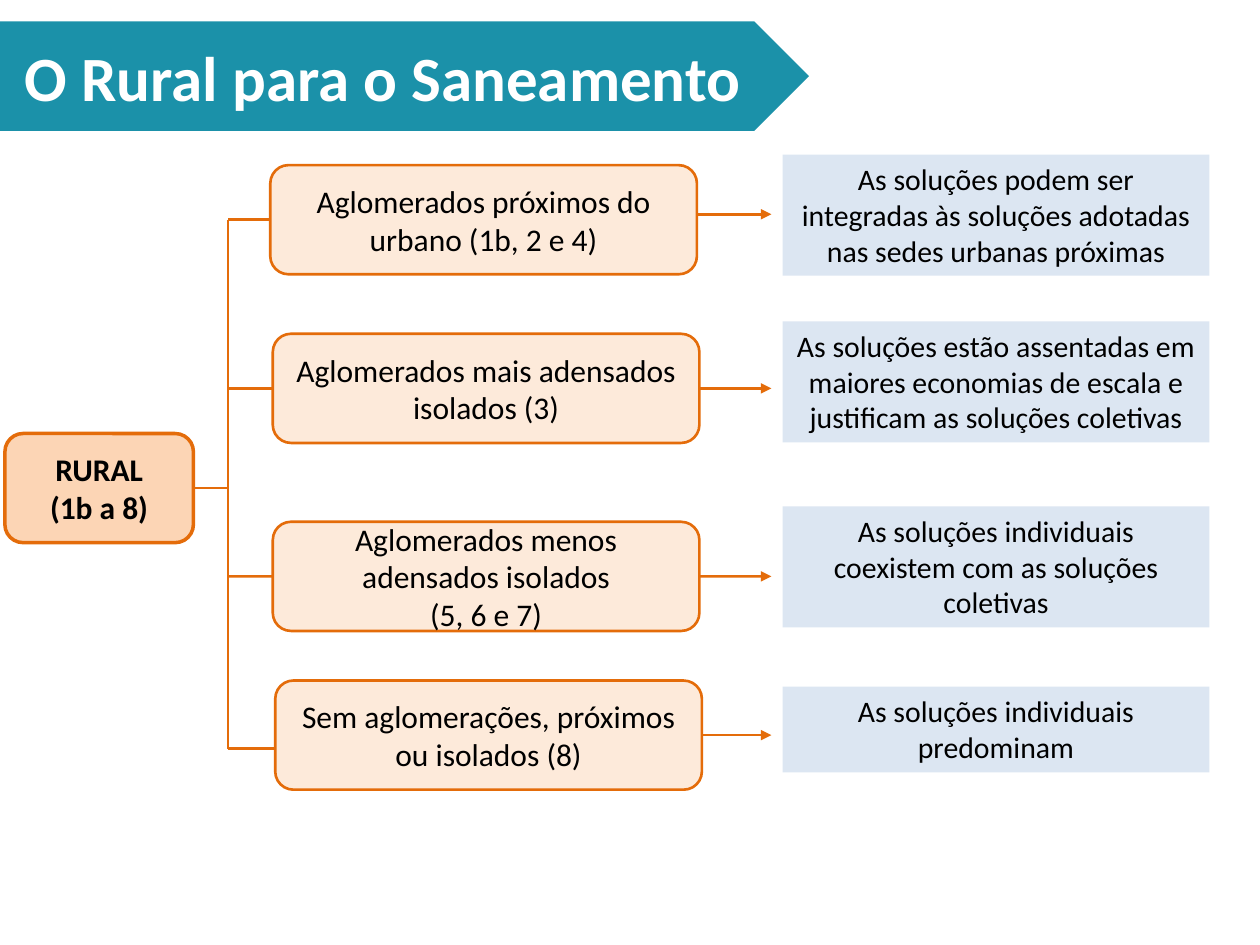
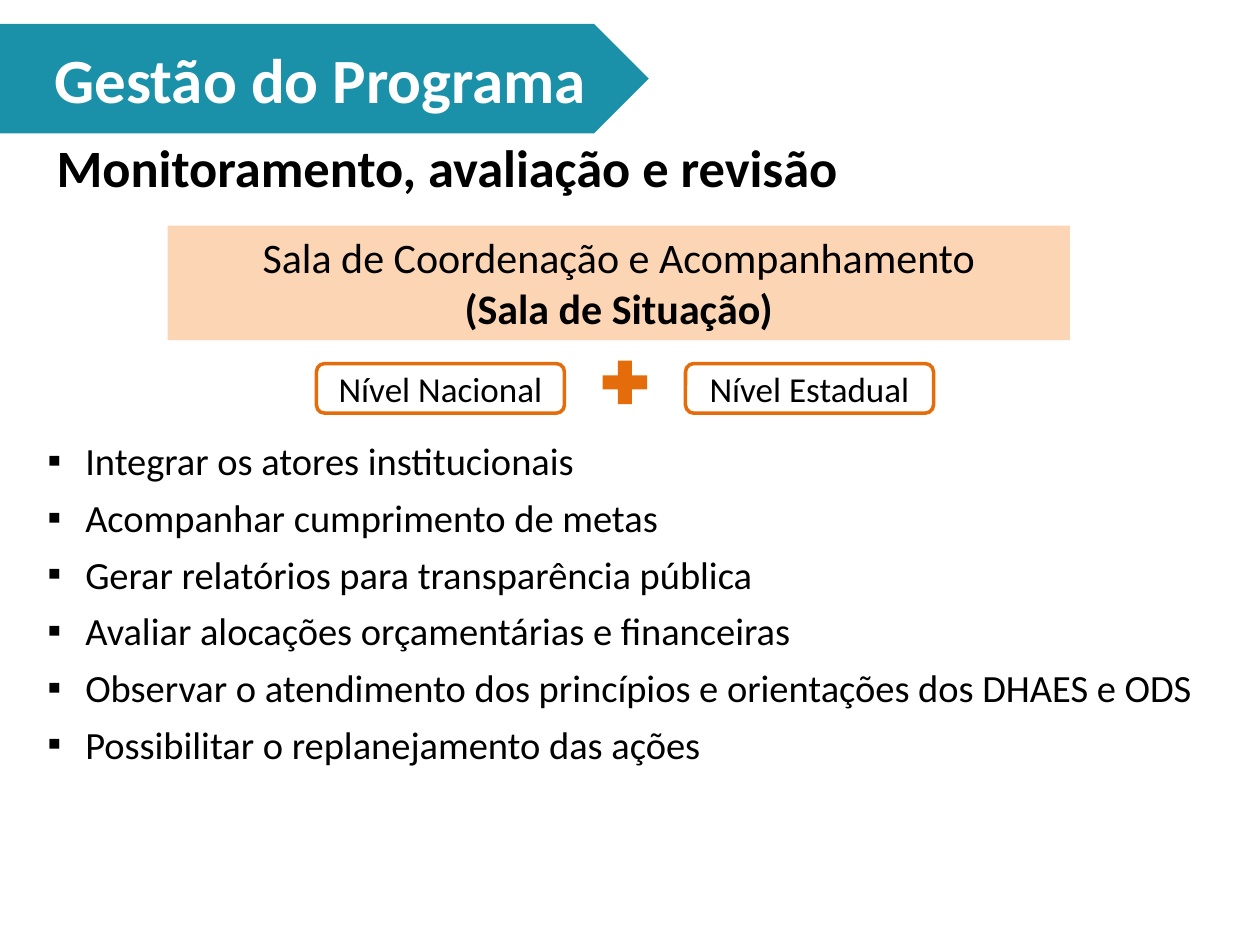
"""Builds two slides on rural sanitation and programme management."""
from dataclasses import dataclass

from lxml.etree import SubElement as Sub
from pptx import Presentation
from pptx.dml.color import RGBColor as RGB
from pptx.enum.shapes import MSO_CONNECTOR as Link, MSO_SHAPE as Form
from pptx.enum.text import MSO_ANCHOR as Anchor, PP_ALIGN as Align
from pptx.oxml.ns import qn
from pptx.util import Cm, Pt


@dataclass(frozen=True)
class Theme:
    font: str = "Calibri"
    teal: str = "1B91A9"
    edge: str = "E46C0A"
    peach: str = "FCD5B5"
    cream: str = "FDEADA"
    blue: str = "DCE6F2"
    white: str = "FFFFFF"
    black: str = "000000"
    title: int = 36
    head: int = 30
    room: int = 24
    item: int = 22
    level: int = 20
    label: int = 18
    note: int = 17
    thin: float = 1.5
    thick: float = 2


look = Theme()


def put(page, form, area, text="", size=look.label, fill=None, line=None,
        ink=look.black, bold=False, align=Align.CENTER, anchor=Anchor.MIDDLE):
    area = [Cm(n) for n in area]
    if form is None:
        shape = page.shapes.add_textbox(*area)
    else:
        shape = page.shapes.add_shape(form, *area)
        shape.shadow.inherit = False
        shape.fill.solid()
        shape.fill.fore_color.rgb = RGB.from_string(fill)
        if line:
            shape.line.color.rgb = RGB.from_string(look.edge)
            shape.line.width = Pt(line)
        else:
            shape.line.fill.background()
    frame = shape.text_frame
    frame.word_wrap = True
    frame.vertical_anchor = anchor
    frame.text = text
    for para in frame.paragraphs:
        para.alignment = align
        for run in para.runs:
            run.font.name = look.font
            run.font.size = Pt(size)
            run.font.bold = bold
            run.font.color.rgb = RGB.from_string(ink)
    return shape


def wire(page, start, end, tail=None, head=None, arrow=False):
    line = page.shapes.add_connector(Link.STRAIGHT, *[Cm(n) for n in (*start, *end)])
    line.line.color.rgb = RGB.from_string(look.edge)
    line.line.width = Pt(look.thin)
    if arrow:
        Sub(line.line._get_or_add_ln(), qn("a:tailEnd"), type="triangle")
    Sub(line._element.spPr, qn("a:effectLst"))
    if tail is not None:
        line.begin_connect(tail, 3)
    if head is not None:
        line.end_connect(head, 1)


deck = Presentation()
deck.slide_width, deck.slide_height = Cm(25.4), Cm(19.05)
pages = []
for text, top, wide, inset in [
    ("O Rural para o Saneamento", 0.43, 16.31, 0.5),
    ("Gestão do Programa", 0.48, 13.08, 1.1),
]:
    page = deck.slides.add_slide(deck.slide_layouts[6])
    band = put(page, Form.PENTAGON, (0, top, wide, 2.21), text, look.title,
               look.teal, ink=look.white, bold=True, align=Align.LEFT)
    band.text_frame.margin_left = Cm(inset)
    pages.append(page)
rural, manage = pages

wide, high, trunk, near = 8.6, 2.2, 4.6, 0.08
root = put(rural, Form.ROUNDED_RECTANGLE, (0.1, 8.74, 3.8, high),
           "RURAL\n(1b a 8)", fill=look.peach, line=look.thick, bold=True)
wire(rural, (3.9, 9.84), (trunk, 9.84), tail=root)
wire(rural, (trunk, 4.43), (trunk, 15.09))

rows = [
    (5.45, 3.33, 4.5, 4.32, 3.12, 2.44, "Aglomerados próximos do urbano (1b, 2 e 4)",
     "As soluções podem ser integradas às soluções adotadas nas sedes urbanas próximas"),
    (5.5, 6.73, 7.85, 7.87, 6.48, 2.44, "Aglomerados mais adensados isolados (3)",
     "As soluções estão assentadas em maiores economias de escala "
     "e justificam as soluções coletivas"),
    (5.5, 10.52, 11.63, 11.61, 10.21, 2.44,
     "Aglomerados menos adensados isolados\n(5, 6 e 7)",
     "As soluções individuais coexistem com as soluções coletivas"),
    (5.55, 13.72, 15.09, 14.88, 13.84, 1.73, "Sem aglomerações, próximos ou isolados (8)",
     "As soluções individuais predominam"),
]
for left, top, branch, arrow, note, tall, group, remark in rows:
    box = put(rural, Form.ROUNDED_RECTANGLE, (left, top, wide, high), group,
              fill=look.cream, line=look.thin)
    put(rural, Form.RECTANGLE, (15.78, note, wide, tall), remark, look.note,
        look.blue, anchor=Anchor.TOP)
    mid = top + high / 2
    ins, out = [abs(y - mid) < near for y in (branch, arrow)]
    y = mid if ins else branch
    wire(rural, (trunk, y), (left, y), head=box if ins else None)
    y = mid if out else arrow
    wire(rural, (left + wide, y), (15.55, y), tail=box if out else None, arrow=True)

put(manage, None, (0.89, 2.59, 23.62, 1.55), "Monitoramento, avaliação e revisão",
    look.head, bold=True, align=Align.LEFT, anchor=Anchor.TOP)
room = put(manage, Form.RECTANGLE, (3.38, 4.55, 18.19, 2.31),
           "Sala de Coordenação e Acompanhamento\n(Sala de Situação)",
           look.room, look.peach, anchor=Anchor.TOP)
room.text_frame.paragraphs[1].runs[0].font.bold = True
for left, text in [(6.38, "Nível Nacional"), (13.82, "Nível Estadual")]:
    put(manage, Form.ROUNDED_RECTANGLE, (left, 7.33, 5, 1), text, look.level,
        look.white, look.thick)
put(manage, Form.MATH_PLUS, (11.99, 7.11, 1.22, 1.2), fill=look.edge)

items = [
    "Integrar os atores institucionais",
    "Acompanhar cumprimento de metas",
    "Gerar relatórios para transparência pública",
    "Avaliar alocações orçamentárias e financeiras",
    "Observar o atendimento dos princípios e orientações dos DHAES e ODS",
    "Possibilitar o replanejamento das ações",
]
tasks = put(manage, None, (0.71, 8.69, 23.98, 6.96), "\n".join(items), look.item,
            align=Align.LEFT, anchor=Anchor.TOP)
for i, para in enumerate(tasks.text_frame.paragraphs):
    para.space_before = Pt(6 if i else 0)
    prop = para._p.get_or_add_pPr()
    prop.set("marL", str(Cm(0.76)))
    prop.set("indent", str(-Cm(0.76)))
    Sub(prop, qn("a:buFont"), typeface=look.font)
    Sub(prop, qn("a:buChar"), char="▪")

deck.save("out.pptx")
